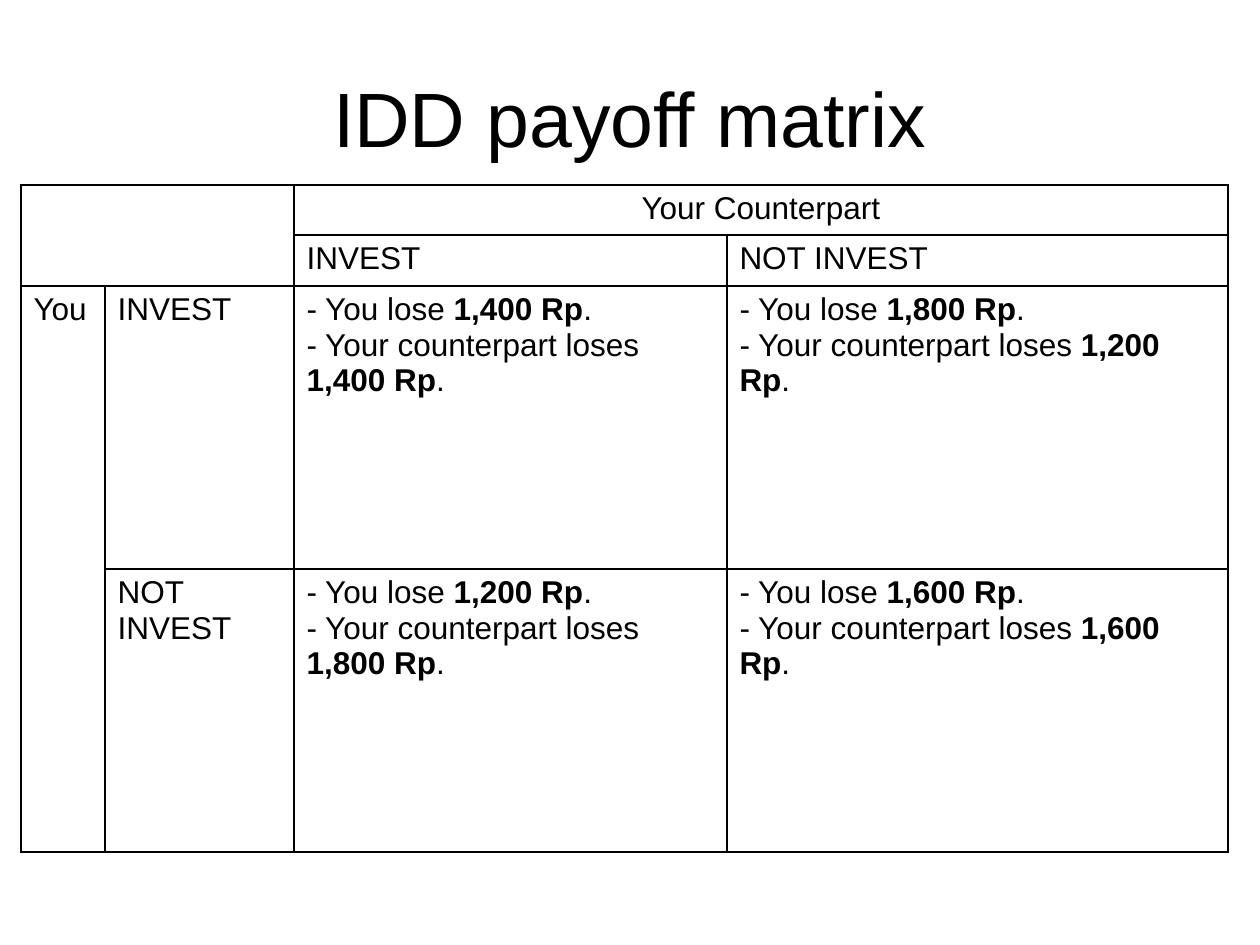
from itertools import product

from lxml.etree import SubElement
from pptx import Presentation
from pptx.dml.color import RGBColor
from pptx.enum.text import MSO_ANCHOR, PP_ALIGN
from pptx.oxml.ns import qn
from pptx.util import Emu, Pt

FONT = "Arial"
INK = "000000"
PAPER = "FFFFFF"
COLUMNS = (84, 189, 433, 501)
ROWS = (50, 50, 283, 283)
HANGING = 48
MERGES = ((0, 0, 1, 1), (0, 2, 0, 3), (2, 0, 3, 0))
LABELS = {
    (0, 2): ("Your Counterpart",),
    (1, 2): ("INVEST",),
    (1, 3): ("NOT INVEST",),
    (2, 0): ("You",),
    (2, 1): ("INVEST",),
    (3, 1): ("NOT", "INVEST"),
}
LOSSES = {
    (2, 2): ("1,400", "1,400"),
    (2, 3): ("1,800", "1,200"),
    (3, 2): ("1,200", "1,800"),
    (3, 3): ("1,600", "1,600"),
}


def px(length):
    """Turn pixels into EMU."""
    return Emu(round(length * 914400 / 126))


def color(code):
    """Turn a hex string into a colour."""
    return RGBColor.from_string(code)


def format_span(span, size, bold=False):
    """Give a run its font, size, weight and colour."""
    span.font.name = FONT
    span.font.size = Pt(size)
    span.font.bold = bold
    span.font.color.rgb = color(INK)


def add_span(para, text, bold=False):
    """Append a table run to a paragraph."""
    span = para.add_run()
    span.text = text
    format_span(span, 18, bold)


def add_title(page, left, top, width, height):
    """Place and format the title."""
    title = page.shapes.title
    title.left, title.top, title.width, title.height = map(px, (left, top, width, height))
    frame = title.text_frame
    frame.text = "IDD payoff matrix"
    frame.vertical_anchor = MSO_ANCHOR.MIDDLE
    para = frame.paragraphs[0]
    para.alignment = PP_ALIGN.CENTER
    format_span(para.runs[0], 44)


def style_cell(cell):
    """Give a cell black borders and a plain fill."""
    properties = cell._tc.get_or_add_tcPr()
    for side in ("lnL", "lnR", "lnT", "lnB"):
        line = SubElement(properties, qn(f"a:{side}"), w=str(Pt(1)))
        SubElement(SubElement(line, qn("a:solidFill")), qn("a:srgbClr"), val=INK)
    cell.fill.solid()
    cell.fill.fore_color.rgb = color(PAPER)


def write_label(cell, lines, alignment):
    """Write a label with a hanging indent on each line."""
    frame = cell.text_frame
    frame.text = "\n".join(lines)
    for para in frame.paragraphs:
        para.alignment = alignment
        properties = para._p.get_or_add_pPr()
        properties.set("marL", str(px(HANGING)))
        properties.set("indent", str(-px(HANGING)))
        format_span(para.runs[0], 18)


def write_losses(cell, own, other):
    """Write both players' losses with bold amounts."""
    para = cell.text_frame.paragraphs[0]
    add_span(para, "- You lose ")
    add_span(para, f"{own} Rp", True)
    add_span(para, ".")
    para.add_line_break()
    add_span(para, "- Your counterpart loses ")
    add_span(para, f"{other} Rp", True)
    add_span(para, ".")


def add_matrix(page, left, top):
    """Build the payoff table."""
    box = page.shapes.add_table(
        len(ROWS), len(COLUMNS), px(left), px(top), px(sum(COLUMNS)), px(sum(ROWS))
    )
    table = box.table
    table.first_row = table.horz_banding = False
    for column, width in zip(table.columns, COLUMNS):
        column.width = px(width)
    for row, height in zip(table.rows, ROWS):
        row.height = px(height)
    for row, column in product(range(len(ROWS)), range(len(COLUMNS))):
        style_cell(table.cell(row, column))
    for first_row, first_column, last_row, last_column in MERGES:
        table.cell(first_row, first_column).merge(table.cell(last_row, last_column))
    for place, lines in LABELS.items():
        alignment = PP_ALIGN.CENTER if place[0] == 0 else PP_ALIGN.LEFT
        write_label(table.cell(*place), lines, alignment)
    for place, amounts in LOSSES.items():
        write_losses(table.cell(*place), *amounts)


def main():
    """Build and save the deck."""
    deck = Presentation()
    deck.slide_width, deck.slide_height = px(1260), px(945)
    page = deck.slides.add_slide(deck.slide_layouts[5])
    page.background.fill.solid()
    page.background.fill.fore_color.rgb = color(PAPER)
    add_title(page, 63, 38, 1134, 158)
    add_matrix(page, 21, 185)
    deck.save("out.pptx")


if __name__ == "__main__":
    main()
